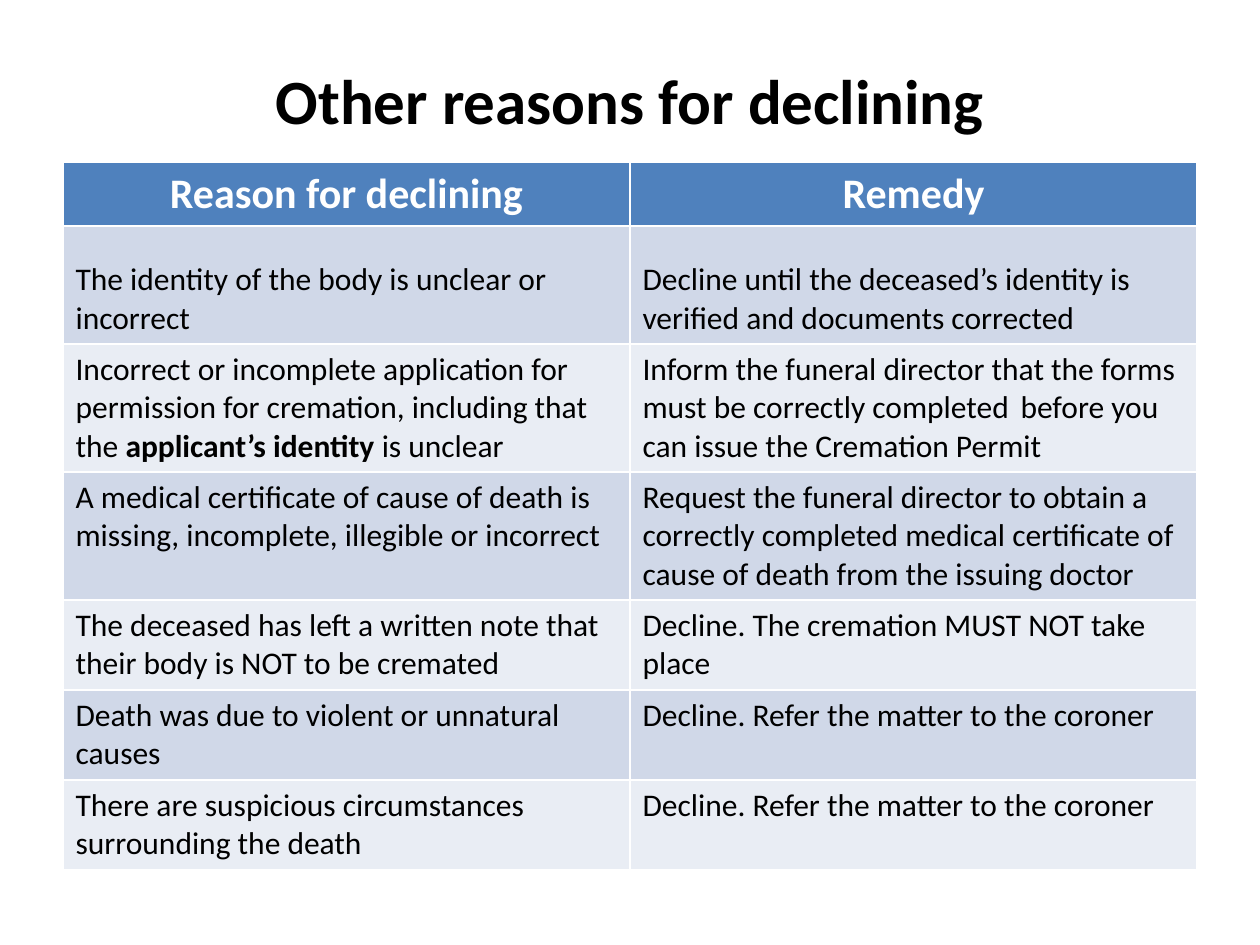
from dataclasses import dataclass

from pptx import Presentation
from pptx import util as u
from pptx.dml.color import RGBColor
from pptx.enum import text


@dataclass(frozen=True)
class Theme:
    font: str = "Calibri"
    ink: str = "000000"
    header_ink: str = "FFFFFF"
    header_fill: str = "4F81BD"
    bands: tuple = ("D0D8E8", "E9EDF4")
    title_size: int = 36
    header_size: int = 24
    body_size: int = 18


theme = Theme()


def px(length):
    return u.Emu(round(length * 914400 / 126))


def write(frame, *spans, size, color=theme.ink, bold=False,
          align=text.PP_ALIGN.LEFT, anchor=text.MSO_ANCHOR.TOP):
    """Fill a frame with one paragraph; a span is a string or (string, bold)."""
    frame.word_wrap = True
    frame.vertical_anchor = anchor
    para = frame.paragraphs[0]
    para.alignment = align
    for item in spans:
        words, span_bold = (item, bold) if isinstance(item, str) else item
        span = para.add_run()
        span.text = words
        span.font.name = theme.font
        span.font.size = u.Pt(size)
        span.font.bold = span_bold
        span.font.color.rgb = RGBColor.from_string(color)


headers = ["Reason for declining", "Remedy"]
# Each entry: row height in px, reason spans, remedy
entries = [
    (118, ["The identity of the body is unclear or incorrect"],
     "Decline until the deceased’s identity is verified and documents corrected"),
    (128, ["Incorrect or incomplete application for permission for cremation, "
           "including that the ", ("applicant’s identity", True), " is unclear"],
     "Inform the funeral director that the forms must be correctly completed\t"
     "before you can issue the Cremation Permit"),
    (128, ["A medical certificate of cause of death is missing, incomplete, "
           "illegible or incorrect"],
     "Request the funeral director to obtain a correctly completed medical "
     "certificate of cause of death from the issuing doctor"),
    (90, ["The deceased has left a written note that their body is NOT to be cremated"],
     "Decline. The cremation MUST NOT take place"),
    (90, ["Death was due to violent or unnatural causes"],
     "Decline. Refer the matter to the coroner"),
    (90, ["There are suspicious circumstances surrounding the death"],
     "Decline. Refer the matter to the coroner"),
]

deck = Presentation()
deck.slide_width, deck.slide_height = px(1260), px(945)
page = deck.slides.add_slide(deck.slide_layouts.get_by_name("Title Only"))

# Title
title = page.shapes.title
title.left, title.top, title.width, title.height = px(63), px(38), px(1134), px(122)
write(title.text_frame, "Other reasons for declining", size=theme.title_size,
      bold=True, align=text.PP_ALIGN.CENTER, anchor=text.MSO_ANCHOR.MIDDLE)

# Table
heights = [62] + [height for height, _, _ in entries]
table = page.shapes.add_table(len(heights), len(headers), px(63), px(162),
                              px(1134), px(sum(heights))).table
for row, height in zip(table.rows, heights):
    row.height = px(height)

# Header row
for column, label in enumerate(headers):
    cell = table.cell(0, column)
    cell.fill.solid()
    cell.fill.fore_color.rgb = RGBColor.from_string(theme.header_fill)
    write(cell.text_frame, label, size=theme.header_size, color=theme.header_ink,
          bold=True, align=text.PP_ALIGN.CENTER)

# Body rows in alternating bands; the first one sits on the bottom of its cells
for index, (_, reason, remedy) in enumerate(entries):
    for column, spans in enumerate([reason, [remedy]]):
        cell = table.cell(index + 1, column)
        cell.fill.solid()
        cell.fill.fore_color.rgb = RGBColor.from_string(theme.bands[index % 2])
        write(cell.text_frame, *spans, size=theme.body_size)
        cell.vertical_anchor = (text.MSO_ANCHOR.BOTTOM if index == 0
                                else text.MSO_ANCHOR.TOP)

deck.save("out.pptx")
